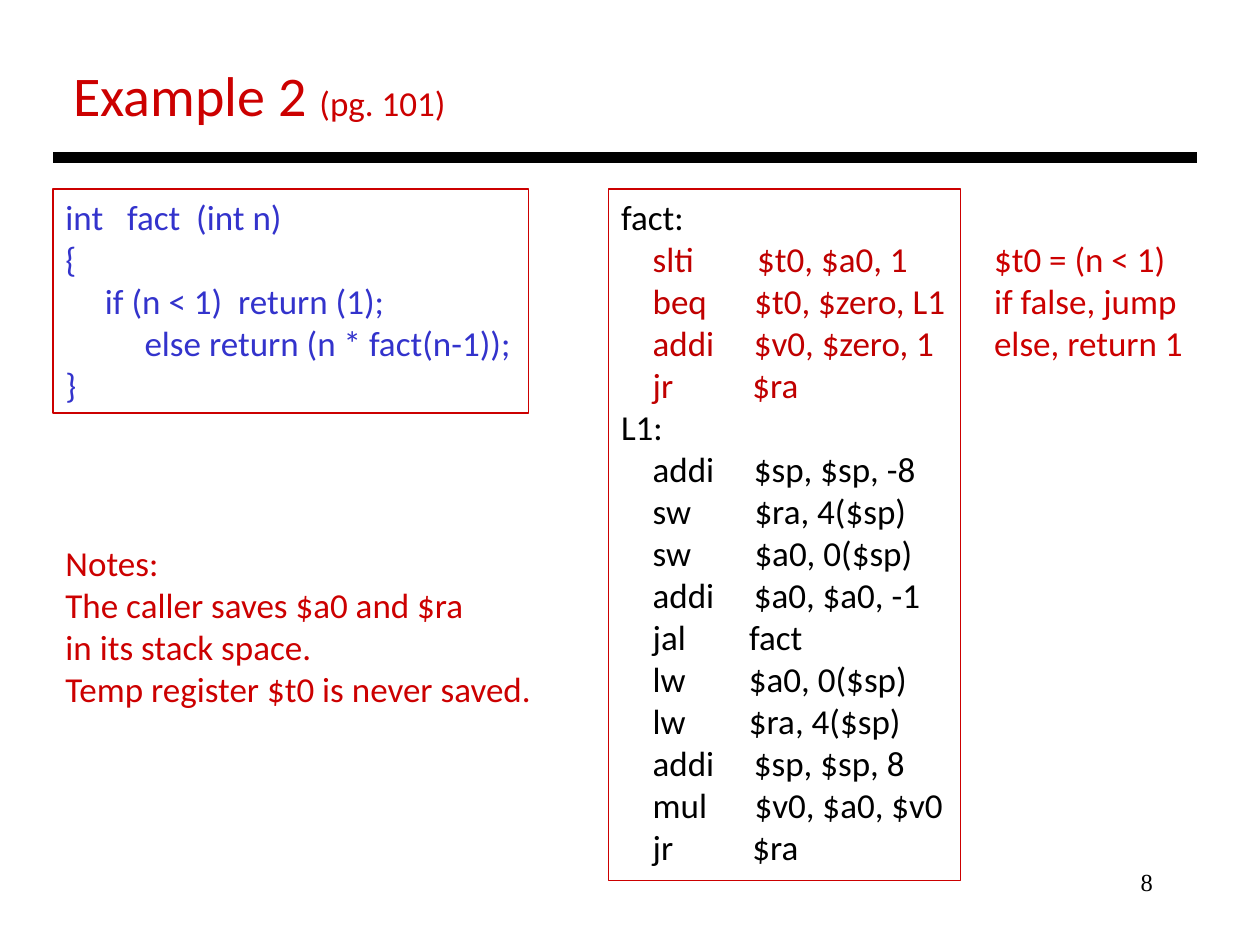
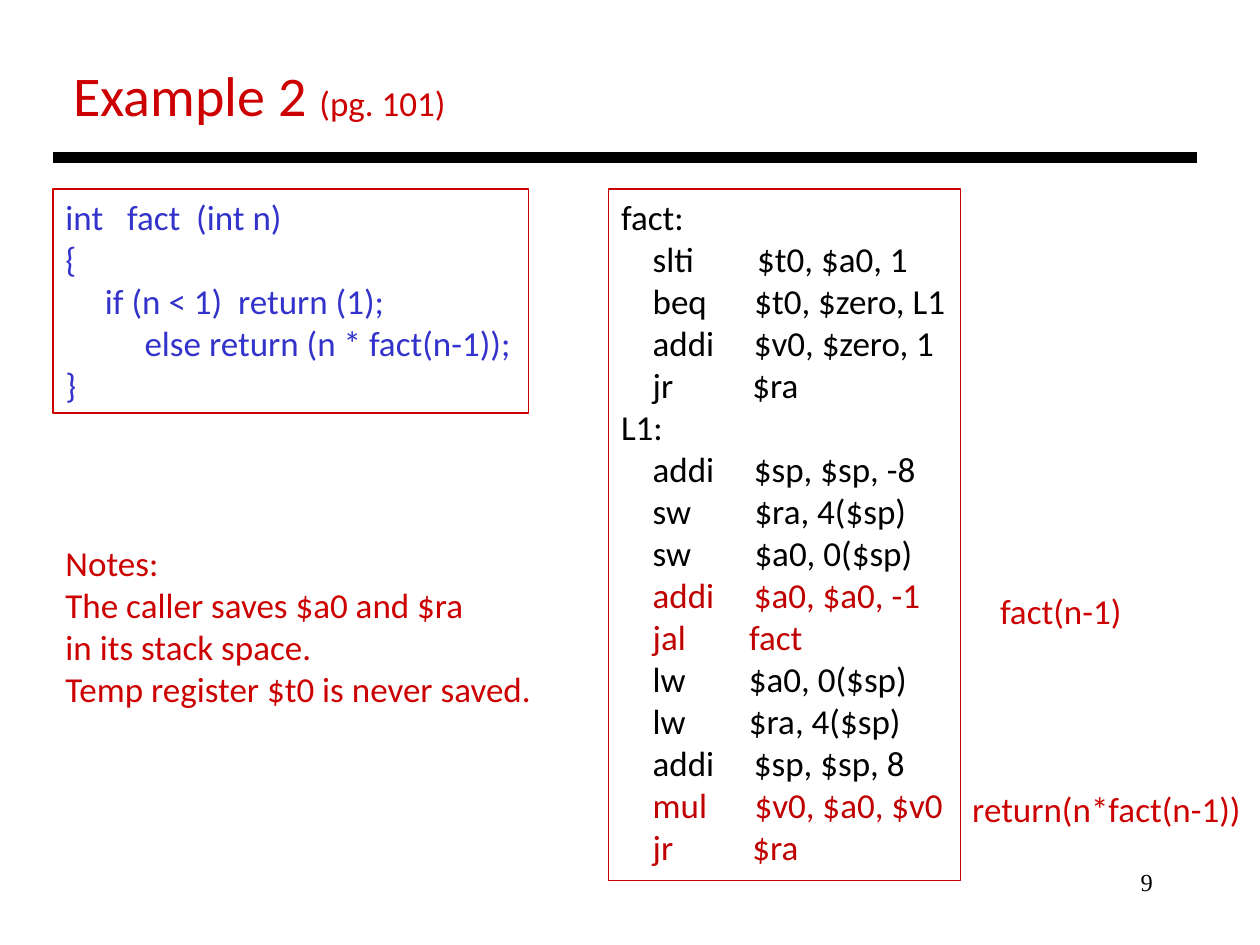
"""Two slides that walk through a recursive factorial in C and MIPS assembly."""
from lxml import etree
from pptx import Presentation
from pptx import util as u
from pptx.dml.color import RGBColor
from pptx.enum import shapes, text
from pptx.oxml.ns import qn

RED, DARK_RED, BLUE, BLACK = "CC0000", "C00000", "3333CC", "000000"
LEFT, TOP = 1.07, 3.81

C_CODE = [
    "int   fact  (int n)",
    "{",
    "     if (n < 1)  return (1);",
    "          else return (n * fact(n-1));",
    "}",
]
ASSEMBLY = [
    "fact:",
    "    slti        $t0, $a0, 1",
    "    beq      $t0, $zero, L1",
    "    addi     $v0, $zero, 1",
    "    jr          $ra",
    "L1:",
    "    addi     $sp, $sp, -8",
    "    sw        $ra, 4($sp)",
    "    sw        $a0, 0($sp)",
    "    addi     $a0, $a0, -1",
    "    jal        fact",
    "    lw        $a0, 0($sp)",
    "    lw        $ra, 4($sp)",
    "    addi     $sp, $sp, 8",
    "    mul      $v0, $a0, $v0",
    "    jr          $ra",
]
NOTES = [
    "Notes:",
    "The caller saves $a0 and $ra",
    "in its stack space.",
    "Temp register $t0 is never saved.",
]
SLIDES = [
    {
        "number": 8,
        "highlighted": {1, 2, 3, 4},
        "remarks": [((19.79, 4.67, 4.34, 2.82),
                     ["$t0 = (n < 1)", "if false, jump", "else, return 1"])],
    },
    {
        "number": 9,
        "highlighted": {9, 10, 14, 15},
        "remarks": [((19.91, 11.76, 3, 1.12), ["fact(n-1)"]),
                    ((19.35, 15.75, 5.99, 1.12), ["return(n*fact(n-1))"])],
    },
]


def add_run(p, words, color, size=20, font="Calibri"):
    r = p.add_run()
    r.text = words
    r.font.name = font
    r.font.size = u.Pt(size)
    r.font.color.rgb = RGBColor.from_string(color)


def add_lines(s, box, lines, color, framed=False, highlighted=()):
    place = [u.Cm(length) for length in box]
    if framed:
        sp = s.shapes.add_shape(shapes.MSO_SHAPE.RECTANGLE, *place)
        sp.shadow.inherit = False
        sp.fill.background()
        sp.line.color.rgb = RGBColor.from_string(RED)
        sp.line.width = u.Pt(0.75)
    else:
        sp = s.shapes.add_textbox(*place)
    tf = sp.text_frame
    tf.word_wrap = False
    tf.auto_size = text.MSO_AUTO_SIZE.SHAPE_TO_FIT_TEXT
    tf.vertical_anchor = text.MSO_ANCHOR.TOP
    for i, line in enumerate(lines):
        p = tf.add_paragraph() if i else tf.paragraphs[0]
        p.alignment = text.PP_ALIGN.LEFT
        add_run(p, line, DARK_RED if i in highlighted else color)


prs = Presentation()
prs.slide_width, prs.slide_height = u.Cm(25.4), u.Cm(19.05)

for content in SLIDES:
    s = prs.slides.add_slide(prs.slide_layouts[5])

    title = s.shapes.title
    title.left, title.top = u.Cm(1.22), u.Cm(1.09)
    title.width, title.height = u.Cm(8.1), u.Cm(1.63)
    tf = title.text_frame
    tf.word_wrap = False
    tf.auto_size = text.MSO_AUTO_SIZE.NONE
    tf.vertical_anchor = text.MSO_ANCHOR.TOP
    p = tf.paragraphs[0]
    p.alignment = text.PP_ALIGN.LEFT
    add_run(p, "Example 2 ", RED, 32)
    add_run(p, "(pg. 101)", RED)

    rule = s.shapes.add_connector(shapes.MSO_CONNECTOR.STRAIGHT,
                                  u.Cm(LEFT), u.Cm(3.18), u.Cm(24.13), u.Cm(3.18))
    rule.line.color.rgb = RGBColor.from_string(BLACK)
    rule.line.width = u.Pt(6)
    etree.SubElement(rule._element.spPr, qn("a:effectLst"))

    add_lines(s, (LEFT, TOP, 9.58, 4.52), C_CODE, BLUE, framed=True)
    add_lines(s, (12.27, TOP, 7.09, 13.94), ASSEMBLY, BLACK, framed=True,
              highlighted=content["highlighted"])
    add_lines(s, (LEFT, 10.8, 9.98, 3.68), NOTES, RED)
    for box, lines in content["remarks"]:
        add_lines(s, box, lines, RED)

    number = s.shapes.add_textbox(u.Cm(18.21), u.Cm(17.35), u.Cm(5.28), u.Cm(1.27))
    number.text_frame.word_wrap = True
    p = number.text_frame.paragraphs[0]
    p.alignment = text.PP_ALIGN.RIGHT
    add_run(p, str(content["number"]), BLACK, 14, "Times New Roman")

prs.save("out.pptx")
